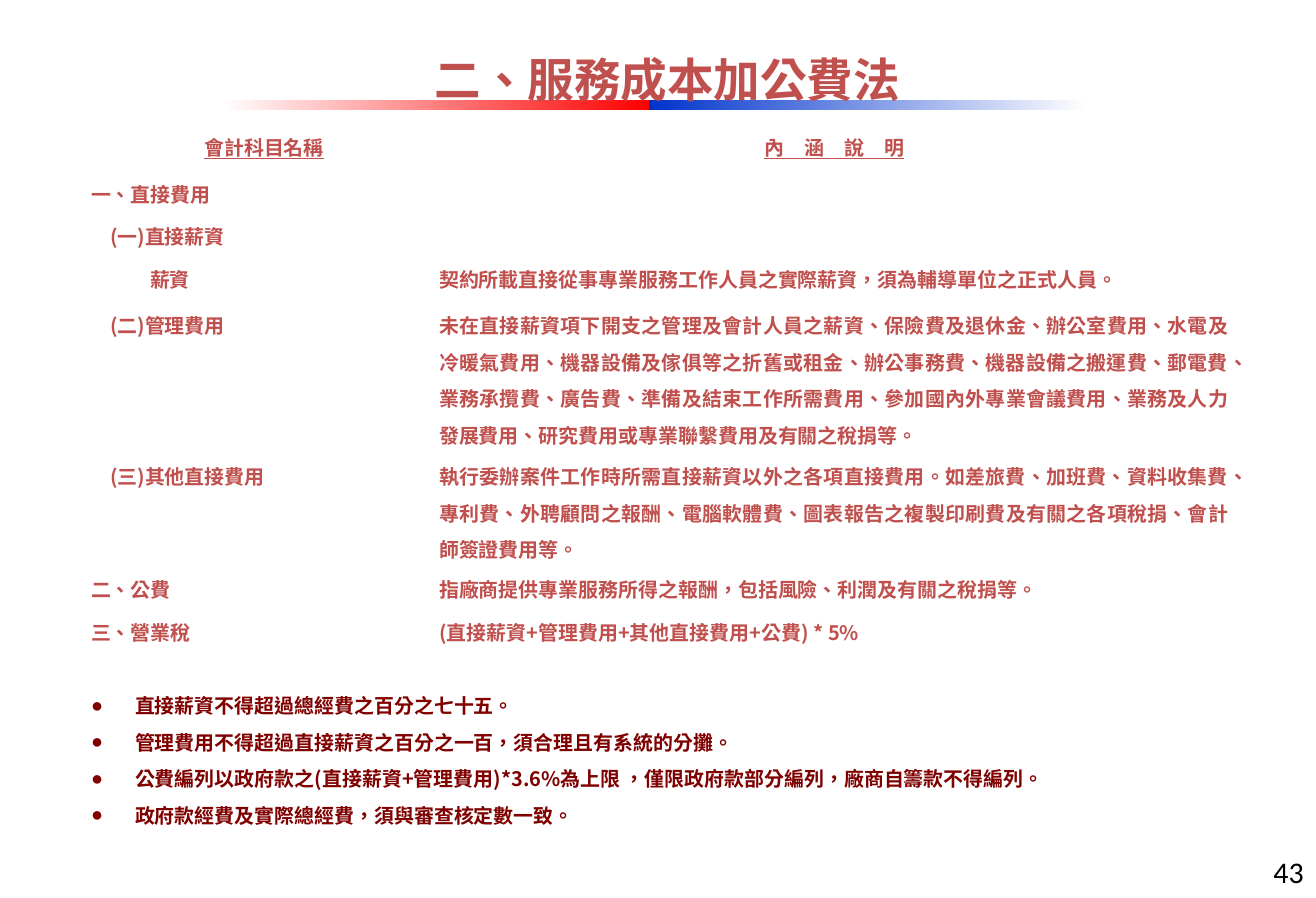
from lxml import etree
from pptx import Presentation
from pptx import util as u
from pptx.dml.color import RGBColor
from pptx.enum import shapes, text
from pptx.oxml.ns import qn

PX = 7639
FONT = "Noto Sans CJK TC"
RED, MAROON = "C0504D", "800000"
COLUMNS = [348, 792]
ROWS = [
    (47, "會計科目名稱", "內　涵　說　明", 0, 0),
    (42, "一、直接費用", "", 40, -40),
    (43, "(一)直接薪資", "", 59, -40),
    (46, "薪資", "契約所載直接從事專業服務工作人員之實際薪資，須為輔導單位之正式人員。", 59, 0),
    (151, "(二)管理費用", "未在直接薪資項下開支之管理及會計人員之薪資、保險費及退休金、辦公室費用、水電及冷暖氣費用、機器設備及傢俱等之折舊或租金、辦公事務費、機器設備之搬運費、郵電費、業務承攬費、廣告費、準備及結束工作所需費用、參加國內外專業會議費用、業務及人力發展費用、研究費用或專業聯繫費用及有關之稅捐等。", 59, -40),
    (113, "(三)其他直接費用", "執行委辦案件工作時所需直接薪資以外之各項直接費用。如差旅費、加班費、資料收集費、專利費、外聘顧問之報酬、電腦軟體費、圖表報告之複製印刷費及有關之各項稅捐、會計師簽證費用等。", 59, -40),
    (43, "二、公費", "指廠商提供專業服務所得之報酬，包括風險、利潤及有關之稅捐等。", 40, -40),
    (73, "三、營業稅", "(直接薪資+管理費用+其他直接費用+公費) * 5%", 40, -40),
]
NOTES = [
    "直接薪資不得超過總經費之百分之七十五。",
    "管理費用不得超過直接薪資之百分之一百，須合理且有系統的分攤。",
    "公費編列以政府款之(直接薪資+管理費用)*3.6%為上限 ，僅限政府款部分編列，廠商自籌款不得編列。",
    "政府款經費及實際總經費，須與審查核定數一致。",
]
NOTES_HEIGHT = 151


def color(value):
    return RGBColor.from_string(value)


def style(para, name, size, value, bold, align):
    para.alignment = align
    font = para.font
    font.name, font.size, font.bold = name, u.Pt(size), bold
    font.color.rgb = color(value)
    defaults = para._p.pPr.find(qn("a:defRPr"))
    defaults.set("lang", "zh-TW")
    defaults.set("altLang", "en-US")
    etree.SubElement(defaults, qn("a:ea")).set("typeface", FONT)


deck = Presentation()
deck.slide_width, deck.slide_height = u.Inches(10.99), u.Inches(7.5)
page = deck.slides.add_slide(deck.slide_layouts[5])

title = page.shapes.title
title.left, title.top, title.width, title.height = 65 * PX, 0, 1204 * PX, 158 * PX
title.text_frame.text = "二、服務成本加公費法"
title.text_frame.vertical_anchor = text.MSO_ANCHOR.MIDDLE
style(title.text_frame.paragraphs[0], "Arial", 28, RED, True, text.PP_ALIGN.CENTER)

rule = page.shapes.add_group_shape()
for left, width, start, end in [(222, 427, "FFFFFF", "FF0000"), (649, 438, "0033CC", "FFFFFF")]:
    bar = rule.shapes.add_shape(shapes.MSO_SHAPE.RECTANGLE, left * PX, 100 * PX, width * PX, 10 * PX)
    bar.shadow.inherit = False
    bar.line.fill.background()
    bar.fill.gradient()
    bar.fill.gradient_angle = 0
    for stop, value in zip(bar.fill.gradient_stops, (start, end)):
        stop.color.rgb = color(value)
title._element.addprevious(rule._element)

number = page.shapes.add_textbox(1062 * PX, 847 * PX, 253 * PX, 49 * PX).text_frame
number.word_wrap = True
number.vertical_anchor = text.MSO_ANCHOR.MIDDLE
number.text = "43"
style(number.paragraphs[0], "Calibri", 18, "000000", False, text.PP_ALIGN.RIGHT)

heights = [row[0] for row in ROWS] + [NOTES_HEIGHT]
table = page.shapes.add_table(
    len(heights), len(COLUMNS), 90 * PX, 125 * PX, sum(COLUMNS) * PX, sum(heights) * PX
).table
table.first_row = table.horz_banding = False
for column, width in zip(table.columns, COLUMNS):
    column.width = width * PX
for row, height in zip(table.rows, heights):
    row.height = height * PX
for cell in table.iter_cells():
    cell.fill.background()
    cell.margin_left = cell.margin_right = PX
    cell.margin_top = cell.margin_bottom = 0

for index, (height, name, meaning, margin, indent) in enumerate(ROWS):
    header = index == 0
    align = text.PP_ALIGN.CENTER if header else text.PP_ALIGN.JUSTIFY
    for column, content in enumerate((name, meaning)):
        cell = table.cell(index, column)
        cell.text = content
        para = cell.text_frame.paragraphs[0]
        para.line_spacing = u.Pt(22)
        style(para, FONT, 12, RED, True, align)
        para.font.underline = header
        if column == 0:
            para._p.pPr.set("marL", str(margin * PX))
            para._p.pPr.set("indent", str(indent * PX))

notes = table.cell(len(ROWS), 0)
notes.merge(table.cell(len(ROWS), 1))
notes.text = "\n".join(NOTES)
for para in notes.text_frame.paragraphs:
    para.line_spacing = u.Pt(22)
    props = para._p.pPr
    props.set("marL", str(44 * PX))
    props.set("indent", str(-44 * PX))
    etree.SubElement(props, qn("a:buFont")).set("typeface", "Arial")
    etree.SubElement(props, qn("a:buChar")).set("char", "●")
    tabs = etree.SubElement(props, qn("a:tabLst"))
    tab = etree.SubElement(tabs, qn("a:tab"))
    tab.set("pos", str(68 * PX))
    tab.set("algn", "l")
    style(para, FONT, 12, MAROON, True, text.PP_ALIGN.JUSTIFY)

deck.save("out.pptx")
